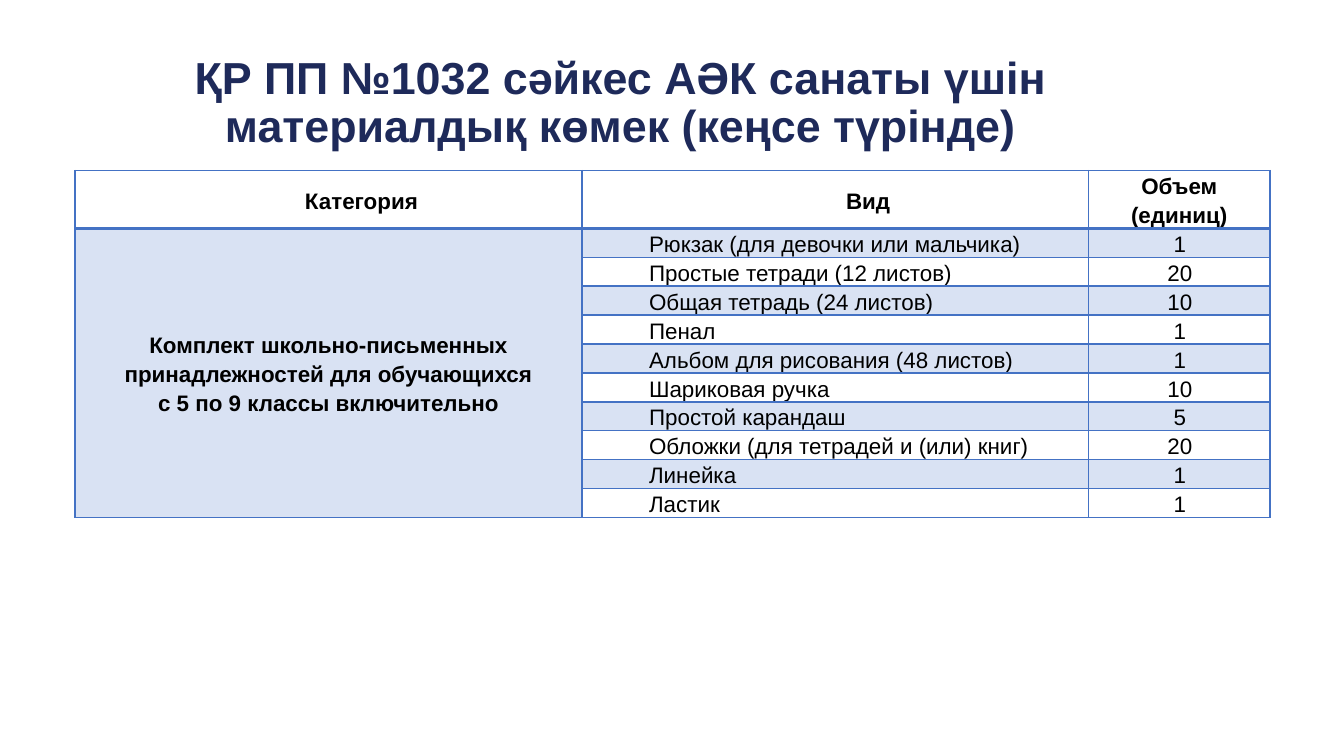
"""Build a slide with a table of school supplies issued to pupils."""
from typing import NamedTuple

from lxml.etree import SubElement
from pptx import Presentation
from pptx.dml.color import RGBColor
from pptx.enum.text import MSO_ANCHOR, MSO_AUTO_SIZE, PP_ALIGN
from pptx.oxml import parse_xml
from pptx.oxml.ns import nsdecls, qn
from pptx.util import Inches, Pt

NAVY = RGBColor(0x1E, 0x2A, 0x5A)
BLACK = RGBColor(0, 0, 0)
BLUE = RGBColor(0x44, 0x72, 0xC4)
FONT = "Arial"
SLIDE_WIDTH = Inches(10)
SLIDE_HEIGHT = SLIDE_WIDTH * 9 // 16
COLUMNS = (3.77, 3.77, 1.35)
TABLE_HEIGHT = Inches(2.84)
HEADER_HEIGHT, ROW_HEIGHT = Inches(0.21), Inches(0.08)
FIRST_LINE = Inches(0.49)
SIDE_MARGINS = (Inches(0.03), 0, Inches(0.03))


class Supply(NamedTuple):
    name: str
    amount: int


class Heading(NamedTuple):
    text: str
    indent: int


HEADINGS = (
    Heading("Категория", FIRST_LINE),
    Heading("Вид", FIRST_LINE),
    Heading("Объем (единиц)", 0),
)
CATEGORY = (
    "Комплект школьно-письменных принадлежностей для обучающихся\n"
    "с 5 по 9 классы включительно"
)
SUPPLIES = (
    Supply("Рюкзак (для девочки или мальчика)", 1),
    Supply("Простые тетради (12 листов)", 20),
    Supply("Общая тетрадь (24 листов)", 10),
    Supply("Пенал", 1),
    Supply("Альбом для рисования (48 листов)", 1),
    Supply("Шариковая ручка", 10),
    Supply("Простой карандаш", 5),
    Supply("Обложки (для тетрадей и (или) книг)", 20),
    Supply("Линейка", 1),
    Supply("Ластик", 1),
)


def write_text(frame, text: str, *, size: float = 12, color: RGBColor = BLACK,
               bold: bool = False, align: PP_ALIGN = PP_ALIGN.CENTER,
               spacing: float = 1.15, after: float = 0, left: int = 0,
               indent: int = 0) -> None:
    """Fill a text frame with evenly formatted paragraphs."""
    frame.text = text
    for paragraph in frame.paragraphs:
        paragraph.alignment = align
        paragraph.line_spacing = spacing
        paragraph.space_after = Pt(after)
        properties = paragraph._p.get_or_add_pPr()
        properties.set("marL", str(left))
        properties.set("indent", str(indent))
        for run in paragraph.runs:
            run.font.name = FONT
            run.font.size = Pt(size)
            run.font.bold = bold
            run.font.color.rgb = color


def style_cell(cell, margin: int, shaded: bool, top: float, bottom: float) -> None:
    """Set the margin, the fill and the borders of a cell."""
    cell.vertical_anchor = MSO_ANCHOR.MIDDLE
    cell.margin_left = cell.margin_right = margin
    cell.margin_top = cell.margin_bottom = 0
    properties = cell._tc.get_or_add_tcPr()
    if shaded:
        cell.fill.solid()
        cell.fill.fore_color.rgb = BLUE
        color = properties.find(f".//{qn('a:srgbClr')}")
        SubElement(color, qn("a:alpha"), val="20000")
    else:
        cell.fill.background()
    for index, (side, width) in enumerate(
            (("L", 1), ("R", 1), ("T", top), ("B", bottom))):
        properties.insert(index, parse_xml(
            f'<a:ln{side} {nsdecls("a")} w="{Pt(width)}"><a:solidFill>'
            f'<a:srgbClr val="{BLUE}"/></a:solidFill></a:ln{side}>'))


def add_title(slide, text: str) -> None:
    """Place and format the slide's title."""
    title = slide.shapes.title
    title.left, title.top = Inches(0.35), Inches(0.51)
    title.width, title.height = Inches(8.53), Inches(0.53)
    frame = title.text_frame
    frame.word_wrap = True
    frame.auto_size = MSO_AUTO_SIZE.NONE
    frame.vertical_anchor = MSO_ANCHOR.MIDDLE
    write_text(frame, text, size=24, color=NAVY, bold=True, spacing=0.9)


def add_supplies_table(slide) -> None:
    """Draw the headings, the merged category and one row for each supply."""
    row_count = len(SUPPLIES) + 1
    table_frame = slide.shapes.add_table(
        row_count, len(COLUMNS), Inches(0.56), Inches(1.27),
        Inches(sum(COLUMNS)), TABLE_HEIGHT)
    table = table_frame.table
    table.first_row = table.horz_banding = False
    for column, width in zip(table.columns, COLUMNS):
        column.width = Inches(width)
    for index, row in enumerate(table.rows):
        row.height = ROW_HEIGHT if index else HEADER_HEIGHT
        for column, cell in enumerate(row.cells):
            shaded = index > 0 and (column == 0 or index % 2 == 1)
            style_cell(cell, SIDE_MARGINS[column], shaded,
                       top=2 if index == 1 else 1, bottom=1 if index else 2)
    table_frame.height = TABLE_HEIGHT
    for column, heading in enumerate(HEADINGS):
        write_text(table.cell(0, column).text_frame, heading.text,
                   bold=True, indent=heading.indent)
    for index, supply in enumerate(SUPPLIES, start=1):
        write_text(table.cell(index, 1).text_frame, supply.name, after=1,
                   align=PP_ALIGN.JUSTIFY, left=Inches(0.01), indent=FIRST_LINE)
        write_text(table.cell(index, 2).text_frame, str(supply.amount),
                   after=1, left=Inches(0.01))
    category = table.cell(1, 0)
    category.merge(table.cell(row_count - 1, 0))
    write_text(category.text_frame, CATEGORY, bold=True)
    for index in range(2, row_count):
        table.cell(index, 0).text_frame.paragraphs[0].font.size = Pt(12)


def main() -> None:
    """Build and save the presentation."""
    presentation = Presentation()
    presentation.slide_width, presentation.slide_height = SLIDE_WIDTH, SLIDE_HEIGHT
    slide = presentation.slides.add_slide(presentation.slide_layouts[5])
    add_title(slide, "ҚР ПП №1032 сәйкес АӘК санаты үшін материалдық көмек (кеңсе түрінде)")
    add_supplies_table(slide)
    presentation.save("out.pptx")


if __name__ == "__main__":
    main()
